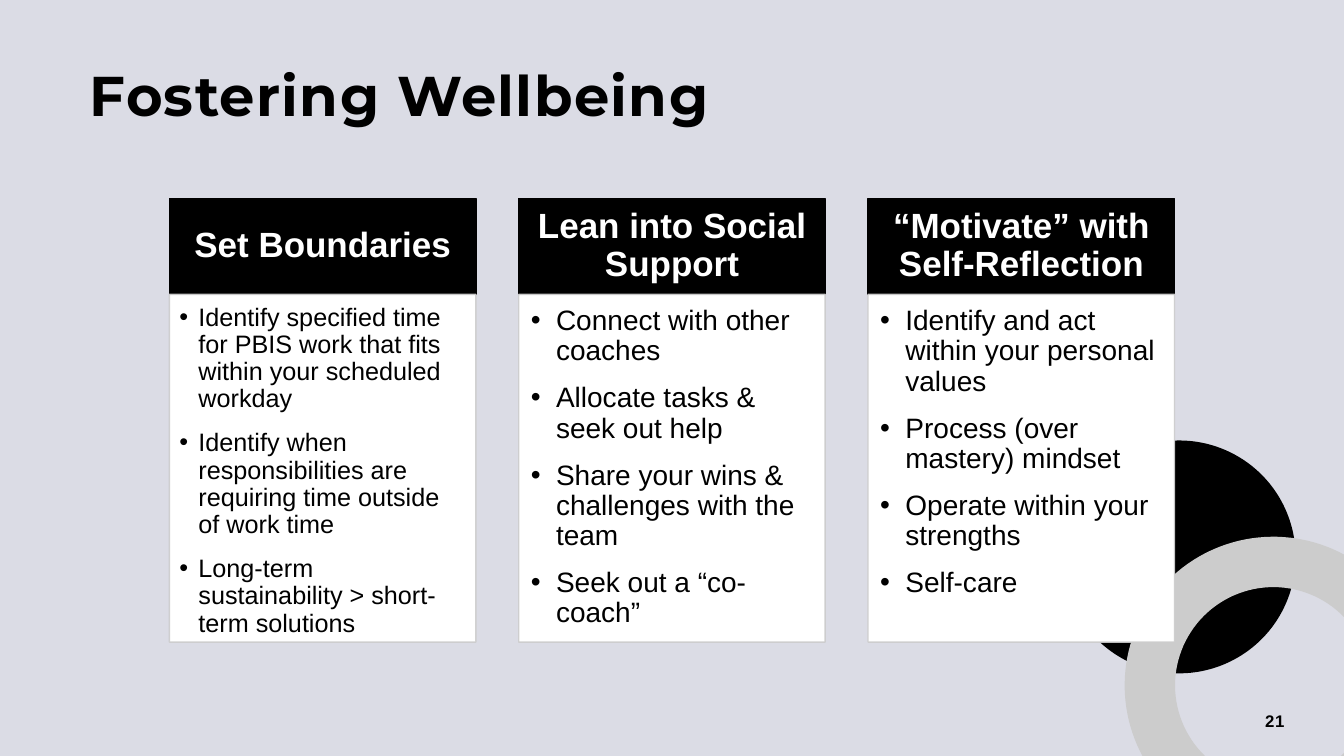
from math import acos, asin, cos, sin, pi

from pptx import Presentation
from pptx.dml.color import RGBColor
from pptx.enum.shapes import MSO_SHAPE as Shape
from pptx.enum.text import MSO_ANCHOR as Anchor, PP_ALIGN as Align
from pptx.oxml.ns import qn
from pptx.util import Inches, Pt
from lxml.etree import SubElement


def color(value):
    return RGBColor.from_string(value)


def write(shape, texts, margins, anchor, paragraph_format, font_format,
          font_color, tracking=0, bullet_indent=0):
    frame = shape.text_frame
    frame.word_wrap = True
    frame.vertical_anchor = anchor
    sides = ("margin_left", "margin_top", "margin_right", "margin_bottom")
    for side, margin in zip(sides, margins):
        setattr(frame, side, Inches(margin))
    for index, text in enumerate(texts):
        paragraph = frame.add_paragraph() if index else frame.paragraphs[0]
        for name, value in paragraph_format.items():
            setattr(paragraph, name, value)
        if bullet_indent:
            properties = paragraph._p.get_or_add_pPr()
            properties.set("marL", str(Inches(bullet_indent)))
            properties.set("indent", str(-Inches(bullet_indent)))
            SubElement(properties, qn("a:buFont"), typeface="Arial")
            SubElement(properties, qn("a:buChar"), char="•")
        run = paragraph.add_run()
        run.text = text
        for name, value in font_format.items():
            setattr(run.font, name, value)
        run.font.color.rgb = color(font_color)
        if tracking:
            run.font._element.set("spc", str(tracking))


presentation = Presentation()
presentation.slide_width = Inches(13.33)
presentation.slide_height = Inches(7.5)
slide = presentation.slides.add_slide(presentation.slide_layouts[6])
slide.background.fill.solid()
slide.background.fill.fore_color.rgb = color("DBDCE5")

disc = slide.shapes.add_shape(
    Shape.OVAL, Inches(10.54), Inches(4.37), Inches(2.31), Inches(2.31))
disc.fill.solid()
disc.fill.fore_color.rgb = color("000000")
disc.line.fill.background()
disc.shadow.inherit = False

center_x, center_y, reach, steps = 12.63, 6.8, 0.7, 60
ring_points = []
for radius, order in ((1.475, 1), (0.975, -1)):
    start = acos(reach / radius)
    end = pi + asin(reach / radius)
    angles = [start + (end - start) * step / steps for step in range(steps + 1)]
    ring_points += [(Inches(center_x + radius * cos(angle)),
                     Inches(center_y - radius * sin(angle)))
                    for angle in angles[::order]]
builder = slide.shapes.build_freeform(*ring_points[0], scale=1.0)
builder.add_line_segments(ring_points[1:], close=True)
builder.move_to(Inches(13.33), Inches(7.47))
builder.add_line_segments([(Inches(13.33), Inches(7.5)),
                           (Inches(13.3), Inches(7.5))], close=True)
ring = builder.convert_to_shape()
ring.fill.solid()
ring.fill.fore_color.rgb = color("CCCCCC")
ring.line.fill.background()
ring.shadow.inherit = False

title = slide.shapes.add_textbox(
    Inches(0.89), Inches(0.68), Inches(7.64), Inches(1.05))
write(title, ["Fostering Wellbeing"], (0, 0, 0, 0), Anchor.TOP,
      {"line_spacing": 0.9},
      {"name": "Montserrat", "size": Pt(40), "bold": True}, "000000", tracking=100)

wide_margins = (0.12, 0.12, 0.16, 0.17)
columns = [
    ("Set Boundaries", 18, 0.19, (0.1, 0.1, 0.14, 0.16), [
        "Identify specified time for PBIS work that fits within your scheduled workday",
        "Identify when responsibilities are requiring time outside of work time",
        "Long-term sustainability > short-term solutions"]),
    ("Lean into Social Support", 20, 0.25, wide_margins, [
        "Connect with other coaches",
        "Allocate tasks & seek out help",
        "Share your wins & challenges with the team",
        "Seek out a “co-coach”"]),
    ("“Motivate” with Self-Reflection", 20, 0.25, wide_margins, [
        "Identify and act within your personal values",
        "Process (over mastery) mindset",
        "Operate within your strengths",
        "Self-care"]),
]
column_left, column_top, column_width, column_pitch = 1.68, 1.97, 3.04, 3.465
header_height, body_height = 0.95, 3.45

for index, (heading, size, indent, margins, items) in enumerate(columns):
    left = Inches(column_left + index * column_pitch)
    header = slide.shapes.add_shape(
        Shape.RECTANGLE, left, Inches(column_top),
        Inches(column_width), Inches(header_height))
    body = slide.shapes.add_shape(
        Shape.RECTANGLE, left, Inches(column_top + header_height),
        Inches(column_width), Inches(body_height))
    for box, fill, line in ((header, "000000", "000000"), (body, "FFFFFF", "CCCCCC")):
        box.fill.solid()
        box.fill.fore_color.rgb = color(fill)
        box.line.color.rgb = color(line)
        box.line.width = Pt(1)
        box.shadow.inherit = False
    line_color = body.line.fill._xPr.find(qn("a:solidFill"))[0]
    SubElement(line_color, qn("a:alpha"), val="90000")
    spacing = {"line_spacing": 0.9, "space_after": Pt(12)}
    write(header, [heading], (0.19, 0.11, 0.19, 0.11), Anchor.MIDDLE,
          {"alignment": Align.CENTER, **spacing},
          {"name": "Arial", "size": Pt(25), "bold": True}, "FFFFFF")
    write(body, items, margins, Anchor.TOP,
          {"alignment": Align.LEFT, **spacing},
          {"name": "Arial", "size": Pt(size)}, "000000", bullet_indent=indent)

page_number = slide.shapes.add_textbox(
    Inches(9.74), Inches(6.95), Inches(3), Inches(0.4))
write(page_number, ["21"], (0, 0, 0, 0), Anchor.MIDDLE,
      {"alignment": Align.RIGHT},
      {"name": "Arial", "size": Pt(12), "bold": True}, "000000", tracking=50)

presentation.save("out.pptx")
